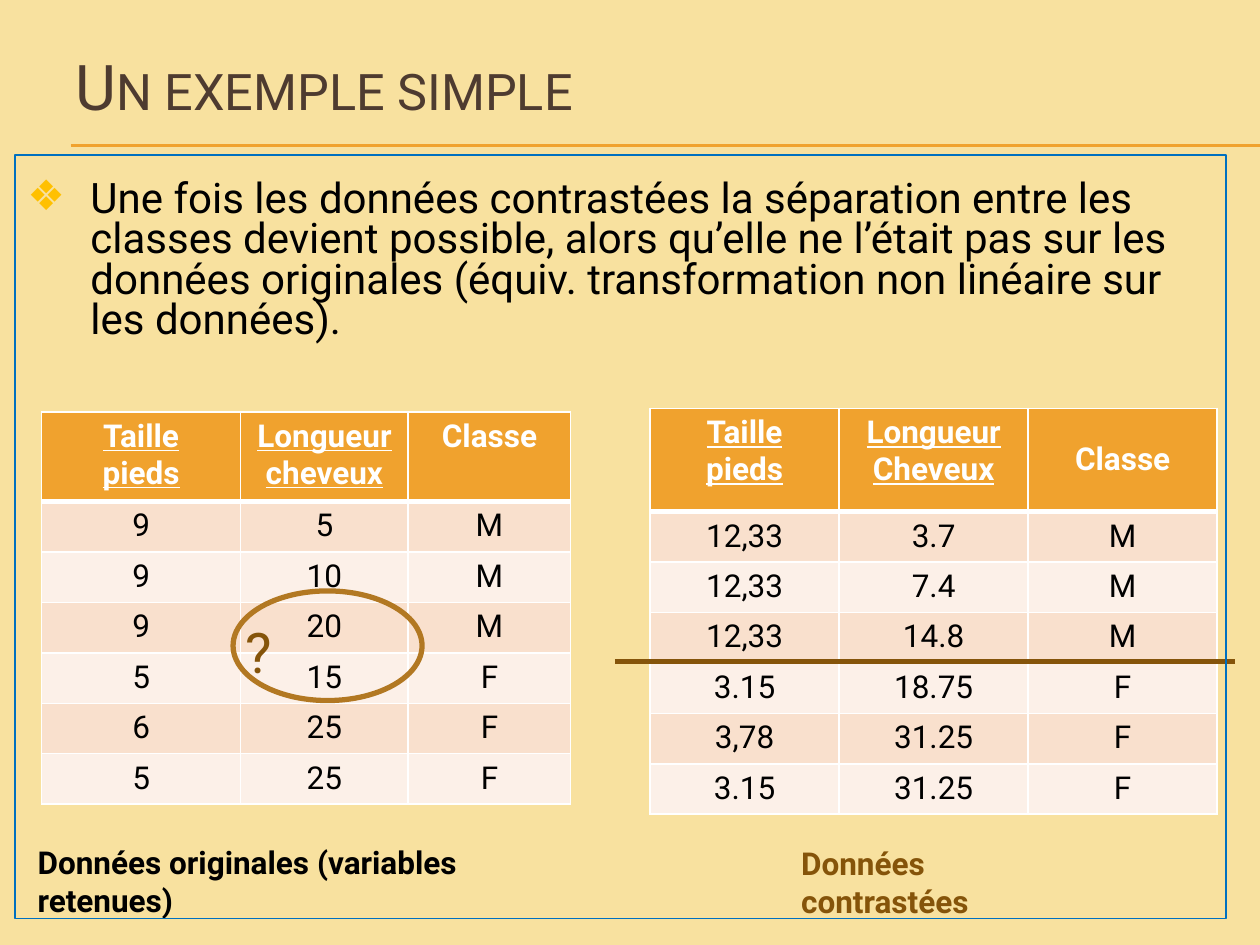
from lxml import etree
from pptx import Presentation
from pptx.dml.color import RGBColor
from pptx.enum.shapes import MSO_CONNECTOR, MSO_SHAPE
from pptx.enum.text import MSO_ANCHOR, PP_ALIGN
from pptx.oxml.ns import qn
from pptx.util import Inches, Pt

STRAIGHT = MSO_CONNECTOR.STRAIGHT
OVAL, RECTANGLE = MSO_SHAPE.OVAL, MSO_SHAPE.RECTANGLE
TOP, MIDDLE = MSO_ANCHOR.TOP, MSO_ANCHOR.MIDDLE
LEFT, CENTER = PP_ALIGN.LEFT, PP_ALIGN.CENTER

SAND = RGBColor(0xF8, 0xE1, 0x9F)
ORANGE = RGBColor(0xF0, 0xA2, 0x2E)
GOLD = RGBColor(0xFF, 0xC0, 0x00)
COCOA = RGBColor(0x4E, 0x3B, 0x30)
BROWN = RGBColor(0x85, 0x54, 0x0A)
BRONZE = RGBColor(0xB2, 0x78, 0x22)
BLUE = RGBColor(0x00, 0x70, 0xC0)
BLACK = RGBColor(0x00, 0x00, 0x00)
WHITE = RGBColor(0xFF, 0xFF, 0xFF)
BANDS = RGBColor(0xF9, 0xE0, 0xCD), RGBColor(0xFC, 0xF0, 0xE8)

COLUMNS, ROWS = 100, 75
BORDERS = "lnL", "lnR", "lnT", "lnB"

ORIGINAL = [
    ("9", "5", "M"), ("9", "10", "M"), ("9", "20", "M"),
    ("5", "15", "F"), ("6", "25", "F"), ("5", "25", "F"),
]
CONTRASTED = [
    ("12,33", "3.7", "M"), ("12,33", "7.4", "M"), ("12,33", "14.8", "M"),
    ("3.15", "18.75", "F"), ("3,78", "31.25", "F"), ("3.15", "31.25", "F"),
]


class SlideBuilder:
    """Draws styled elements on one slide, placed on a grid of 100 columns by 75 rows."""

    font = "Roboto"

    def __init__(self, deck):
        self.column = deck.slide_width / COLUMNS
        self.row = deck.slide_height / ROWS
        self.slide = deck.slides.add_slide(deck.slide_layouts[6])
        fill = self.slide.background.fill
        fill.solid()
        fill.fore_color.rgb = SAND

    def place(self, left, top, width, height):
        return (round(left * self.column), round(top * self.row),
                round(width * self.column), round(height * self.row))

    def add_span(self, para, text, size, color, bold=False, underline=False):
        span = para.add_run()
        span.text = text
        font = span.font
        font.name, font.size, font.bold = self.font, Pt(size), bold
        font.underline = underline
        font.color.rgb = color
        return span

    def text(self, area, text, size, color, bold=False, anchor=TOP):
        box = self.slide.shapes.add_textbox(*self.place(*area))
        frame = box.text_frame
        frame.word_wrap = True
        frame.vertical_anchor = anchor
        para = frame.paragraphs[0]
        para.alignment = LEFT
        return para, self.add_span(para, text, size, color, bold)

    def title(self, area, text):
        _, span = self.text(area, text, 36, COCOA, anchor=MIDDLE)
        span.font._element.set("cap", "small")

    def bullet(self, area, text):
        para, _ = self.text(area, text, 24, BLACK)
        para.line_spacing = 0.8
        para.space_before = Pt(5)
        props = para._p.get_or_add_pPr()
        props.set("marL", str(Inches(0.5)))
        props.set("indent", str(-Inches(0.5)))
        color = etree.SubElement(props, qn("a:buClr"))
        etree.SubElement(color, qn("a:srgbClr"), val=str(GOLD))
        etree.SubElement(props, qn("a:buFont"), typeface=self.font)
        etree.SubElement(props, qn("a:buChar"), char="❖")

    def line(self, left, right, row, color, weight):
        x1, y, x2, _ = self.place(left, row, right, row)
        line = self.slide.shapes.add_connector(STRAIGHT, x1, y, x2, y)
        line.line.color.rgb = color
        line.line.width = Pt(weight)
        etree.SubElement(line._element.spPr, qn("a:effectLst"))

    def outline(self, kind, area, color, weight):
        shape = self.slide.shapes.add_shape(kind, *self.place(*area))
        shape.shadow.inherit = False
        shape.fill.background()
        shape.line.color.rgb = color
        shape.line.width = Pt(weight)

    def cell(self, cell, lines, fill, header=False, underline=False, anchor=TOP):
        props = cell._tc.get_or_add_tcPr()
        for side in BORDERS:
            weight = 3 if header and side == "lnB" else 1
            border = etree.SubElement(props, qn(f"a:{side}"), w=str(Pt(weight)))
            paint = etree.SubElement(border, qn("a:solidFill"))
            etree.SubElement(paint, qn("a:srgbClr"), val=str(WHITE))
        cell.fill.solid()
        cell.fill.fore_color.rgb = fill
        cell.vertical_anchor = anchor
        frame = cell.text_frame
        for index, text in enumerate(lines):
            para = frame.add_paragraph() if index else frame.paragraphs[0]
            para.alignment = CENTER
            self.add_span(para, text, 18, WHITE if header else BLACK, header, underline)

    def table(self, left, top, widths, head_height, row_height, hair, records, class_anchor):
        height = head_height + row_height * len(records)
        area = self.place(left, top, sum(widths), height)
        table = self.slide.shapes.add_table(len(records) + 1, len(widths), *area).table
        for column, width in zip(table.columns, widths):
            column.width = round(width * self.column)
        for index, row in enumerate(table.rows):
            row.height = round((row_height if index else head_height) * self.row)
        headings = ["Taille", "pieds"], [hair], ["Classe"]
        for index, lines in enumerate(headings):
            last = index == len(headings) - 1
            self.cell(table.cell(0, index), lines, ORANGE, True, not last,
                      class_anchor if last else TOP)
        for number, record in enumerate(records):
            for index, value in enumerate(record):
                self.cell(table.cell(number + 1, index), [value], BANDS[number % 2])


def main():
    deck = Presentation()
    deck.slide_width, deck.slide_height = Inches(10), Inches(7.5)
    page = SlideBuilder(deck)
    for row in (11.5, 11.6):
        page.line(5.6, COLUMNS, row, ORANGE, 0.75)
    page.bullet((1.2, 13.9, 95, 49.5),
                "Une fois les données contrastées la séparation entre les classes devient "
                "possible, alors qu’elle ne l’était pas sur les données originales "
                "(équiv. transformation non linéaire sur les données).")
    page.title((5, 0.5, 90, 12.5), "Un exemple simple")
    page.table(51.6, 32.4, (15, 15, 15), 8.2, 3.9, "Longueur Cheveux", CONTRASTED, MIDDLE)
    page.line(48.8, 98, 52.5, BROWN, 3)
    page.text((62.6, 66.5, 24.7, 4), "Données contrastées", 18, BROWN, bold=True)
    page.text((2, 66.4, 44.2, 4), "Données originales (variables retenues)", 18, BLACK, bold=True)
    page.table(3.3, 32.7, (15.8, 13.3, 12.9), 7.1, 3.5, "Longueur cheveux", ORIGINAL, TOP)
    page.text((18.5, 48.5, 42.3, 6.4), "?", 32, BROWN)
    page.outline(OVAL, (18.5, 46.9, 15, 8.7), BRONZE, 3)
    page.outline(RECTANGLE, (1.2, 12.3, 96.1, 60.6), BLUE, 0.75)
    deck.save("out.pptx")


if __name__ == "__main__":
    main()
